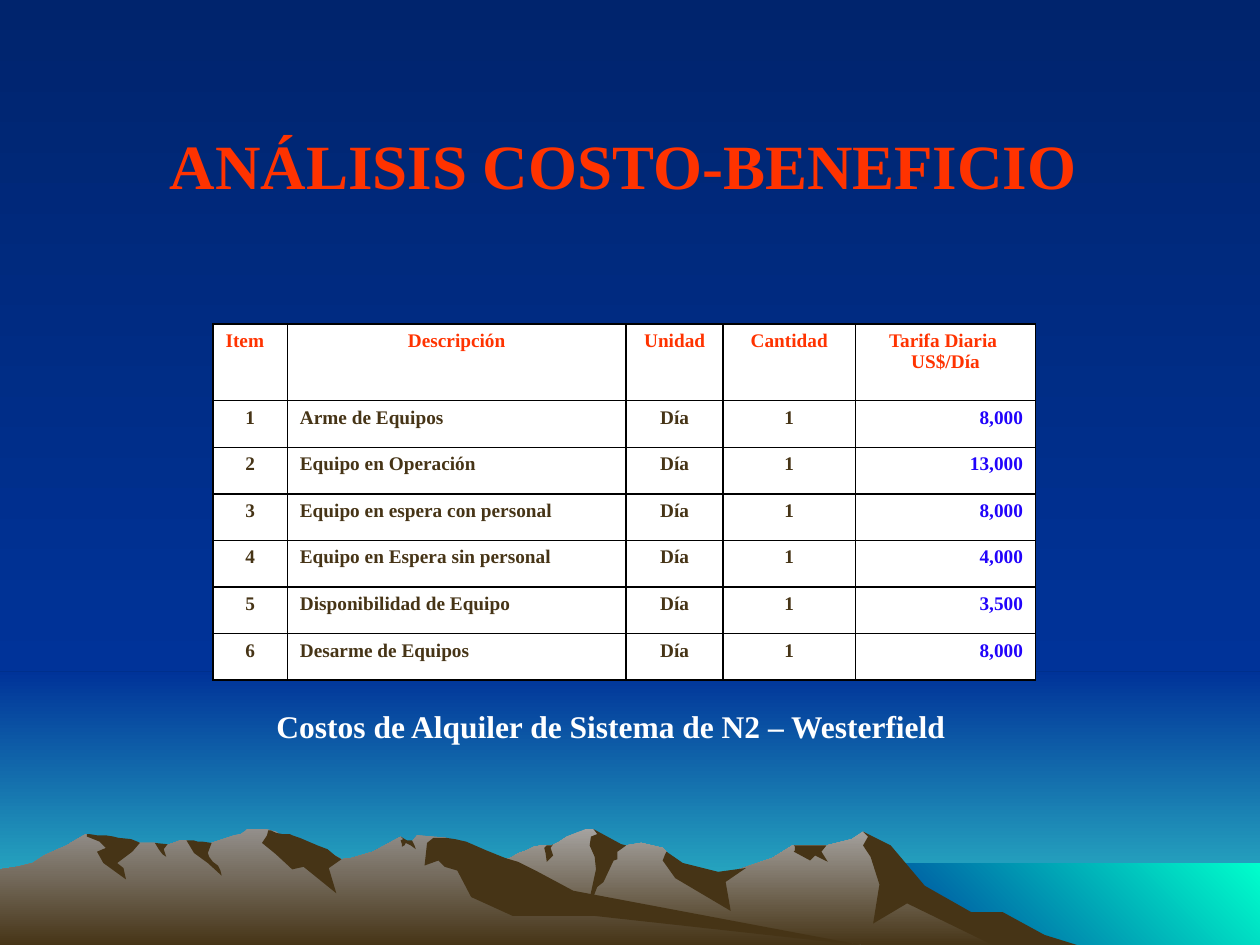
from dataclasses import dataclass
from lxml.etree import SubElement
from pptx import Presentation
from pptx.dml.color import RGBColor
from pptx.enum.shapes import MSO_SHAPE as Shape
from pptx.enum.text import MSO_ANCHOR as Anchor, PP_ALIGN as Align
from pptx.oxml.ns import qn
from pptx.util import Inches, Pt


@dataclass(frozen=True)
class Theme:
    font: str = "Times New Roman"
    accent: str = "FF3300"
    earth: str = "463416"
    amount: str = "2103FB"
    white: str = "FFFFFF"
    border: str = "000000"
    night: tuple = ("00246D", "003399")
    horizon: tuple = ("003399", "33CCCC")
    sea: tuple = ("003399", "00FFCC")
    far_rock: tuple = ("A5A29F", "463416")
    near_rock: tuple = ("938F8B", "463416")
    title_size: int = 36
    caption_size: int = 18
    table_size: int = 11
    border_width: int = 1


THEME = Theme()
DOWN, UP_RIGHT = 270, 45

TITLE = "ANÁLISIS COSTO-BENEFICIO "
CAPTION = "Costos de Alquiler de Sistema de N2 – Westerfield "
HEADERS = ["Item", "Descripción", "Unidad", "Cantidad", "Tarifa Diaria \nUS$/Día"]
RATES = [
    ("Arme de Equipos", "8,000"),
    ("Equipo en Operación", "13,000"),
    ("Equipo en espera con personal", "8,000"),
    ("Equipo en Espera sin personal", "4,000"),
    ("Disponibilidad de Equipo", "3,500"),
    ("Desarme de Equipos", "8,000"),
]
COLUMN_WIDTHS = [0.59, 2.69, 0.77, 1.05, 1.43]
HEADER_ALIGNS = [Align.LEFT] + [Align.CENTER] * 4
BODY_ALIGNS = [Align.CENTER, Align.LEFT, Align.CENTER, Align.CENTER, Align.RIGHT]
BODY_COLORS = [THEME.earth] * 4 + [THEME.amount]
HEADER_HEIGHT, ROW_HEIGHT = 0.61, 0.37

BANDS = [
    ((0, 5.33, 10, 2.17), THEME.horizon, DOWN),
    ((0, 0, 10, 5.33), THEME.night, DOWN),
    ((6.83, 6.85, 3.17, 0.67), THEME.sea, UP_RIGHT),
]

UNIT = Inches(0.01)
FAR_RANGE = [
    (802, 740), (778, 727), (764, 723), (723, 698), (702, 671), (685, 660), (676, 666),
    (656, 671), (629, 671), (613, 681), (566, 697), (536, 690), (529, 676), (526, 673),
    (509, 669), (497, 671), (486, 673), (474, 661), (471, 658), (465, 658), (450, 664),
    (444, 668), (438, 671), (430, 671), (424, 672), (418, 675), (412, 677), (405, 681),
    (399, 683), (394, 685), (355, 698), (327, 709), (277, 739), (258, 751), (821, 751),
]
FAR_SHADOWS = [
    [(796, 724), (771, 724), (734, 703), (707, 671), (685, 660), (689, 664), (685, 671),
     (691, 680), (698, 702), (693, 733), (720, 717), (792, 752), (858, 751), (829, 742)],
    [(471, 658), (474, 662), (469, 664), (468, 671), (472, 680), (473, 690), (465, 727),
     (474, 704), (479, 700), (487, 683), (490, 682), (490, 676), (497, 671), (493, 670)],
    [(529, 676), (528, 678), (526, 683), (536, 697), (580, 723), (576, 700), (592, 689),
     (570, 692), (542, 685)],
    [(650, 671), (630, 671), (631, 672), (631, 675), (630, 676), (643, 683), (647, 679),
     (657, 684), (652, 676), (656, 671)],
    [(433, 677), (432, 673), (434, 671), (438, 671), (439, 670), (437, 673), (439, 679),
     (434, 684)],
]
NEAR_RANGE = [
    (690, 751), (667, 748), (432, 712), (354, 665), (331, 663), (327, 668), (323, 668),
    (318, 664), (296, 676), (279, 681), (271, 682), (260, 676), (236, 681), (223, 663),
    (219, 660), (215, 659), (212, 658), (196, 658), (194, 660), (191, 662), (186, 663),
    (180, 665), (168, 669), (160, 671), (148, 667), (143, 667), (132, 671), (128, 671),
    (123, 669), (111, 669), (94, 671), (68, 662), (56, 669), (53, 671), (46, 674),
    (35, 679), (26, 685), (14, 688), (0, 690), (0, 751),
]
NEAR_SHADOWS = [
    [(212, 663), (208, 669), (219, 678), (232, 690), (241, 688), (267, 709), (261, 689),
     (271, 682), (266, 679), (260, 674), (252, 671), (245, 668), (238, 665), (232, 663),
     (230, 662), (224, 662), (219, 661), (215, 659), (213, 659)],
    [(370, 668), (361, 666), (354, 665), (344, 665), (339, 669), (337, 687), (348, 683),
     (353, 688), (363, 691), (374, 712), (407, 727), (472, 727), (690, 751), (683, 750),
     (455, 707), (427, 692), (411, 684), (401, 681), (386, 675)],
    [(318, 667), (320, 666), (318, 664), (323, 667), (327, 667), (329, 671), (330, 674),
     (326, 671), (322, 669), (321, 671), (319, 672), (319, 670)],
    [(154, 667), (157, 668), (161, 668), (168, 669), (165, 677), (166, 680), (169, 684),
     (173, 687), (175, 691), (176, 695), (165, 685), (154, 677), (148, 667)],
    [(133, 670), (130, 674), (131, 677), (132, 680), (129, 678), (126, 674), (123, 669)],
    [(109, 668), (111, 669), (105, 676), (93, 685), (98, 689), (100, 698), (82, 685),
     (77, 676), (84, 673), (79, 668), (69, 664), (69, 662), (71, 662), (77, 663),
     (84, 663), (90, 664), (94, 665), (104, 666)],
]


def apply_gradient(fill, colors, angle):
    fill.gradient()
    fill.gradient_angle = angle
    for stop, color in zip(fill.gradient_stops, colors):
        stop.color.rgb = RGBColor.from_string(color)


def apply_solid(fill, color):
    fill.solid()
    fill.fore_color.rgb = RGBColor.from_string(color)


def write(text_frame, text, *, size, color, align=Align.CENTER):
    text_frame.word_wrap = True
    text_frame.text = text
    for paragraph in text_frame.paragraphs:
        paragraph.alignment = align
        font = paragraph.runs[0].font
        font.name, font.size, font.bold = THEME.font, Pt(size), True
        font.color.rgb = RGBColor.from_string(color)


def add_outline(slide, points):
    builder = slide.shapes.build_freeform(*points[0], scale=UNIT)
    builder.add_line_segments(points[1:], close=True)
    shape = builder.convert_to_shape()
    shape.shadow.inherit = False
    shape.line.fill.background()
    return shape


def add_range(slide, ridge, colors, shadows):
    apply_gradient(add_outline(slide, ridge).fill, colors, DOWN)
    for points in shadows:
        apply_solid(add_outline(slide, points).fill, THEME.earth)


def add_text(slide, box, text, anchor=Anchor.TOP, **text_format):
    text_frame = slide.shapes.add_textbox(*map(Inches, box)).text_frame
    text_frame.vertical_anchor = anchor
    write(text_frame, text, **text_format)


def format_cell(cell, text, color, align):
    write(cell.text_frame, text, size=THEME.table_size, color=color, align=align)
    properties = cell._tc.get_or_add_tcPr()
    for side in ("a:lnL", "a:lnR", "a:lnT", "a:lnB"):
        line = SubElement(properties, qn(side), w=str(Pt(THEME.border_width)))
        SubElement(SubElement(line, qn("a:solidFill")), qn("a:srgbClr"), val=THEME.border)
    apply_solid(cell.fill, THEME.white)


def add_rate_table(slide):
    rows = [HEADERS] + [
        [str(item), name, "Día", "1", rate]
        for item, (name, rate) in enumerate(RATES, 1)
    ]
    heights = [HEADER_HEIGHT] + [ROW_HEIGHT] * len(RATES)
    box = (1.69, 2.57, sum(COLUMN_WIDTHS), sum(heights))
    table = slide.shapes.add_table(len(rows), len(HEADERS), *map(Inches, box)).table
    table.first_row = table.horz_banding = False
    for column, width in zip(table.columns, COLUMN_WIDTHS):
        column.width = Inches(width)
    for index, (values, height) in enumerate(zip(rows, heights)):
        table.rows[index].height = Inches(height)
        colors = BODY_COLORS if index else [THEME.accent] * len(HEADERS)
        aligns = BODY_ALIGNS if index else HEADER_ALIGNS
        for cell, *cell_format in zip(table.rows[index].cells, values, colors, aligns):
            format_cell(cell, *cell_format)


def main():
    presentation = Presentation()
    presentation.slide_width, presentation.slide_height = Inches(10), Inches(7.5)
    slide = presentation.slides.add_slide(presentation.slide_layouts[6])
    apply_gradient(slide.background.fill, THEME.night, DOWN)
    for box, colors, angle in BANDS:
        band = slide.shapes.add_shape(Shape.RECTANGLE, *map(Inches, box))
        band.shadow.inherit = False
        band.line.fill.background()
        apply_gradient(band.fill, colors, angle)
    add_range(slide, FAR_RANGE, THEME.far_rock, FAR_SHADOWS)
    add_range(slide, NEAR_RANGE, THEME.near_rock, NEAR_SHADOWS)
    add_text(slide, (0.51, 0.68, 9, 1.25), TITLE, Anchor.MIDDLE,
             size=THEME.title_size, color=THEME.accent)
    add_rate_table(slide)
    add_text(slide, (1.77, 5.56, 6.22, 0.4), CAPTION,
             size=THEME.caption_size, color=THEME.white)
    presentation.save("out.pptx")


if __name__ == "__main__":
    main()
